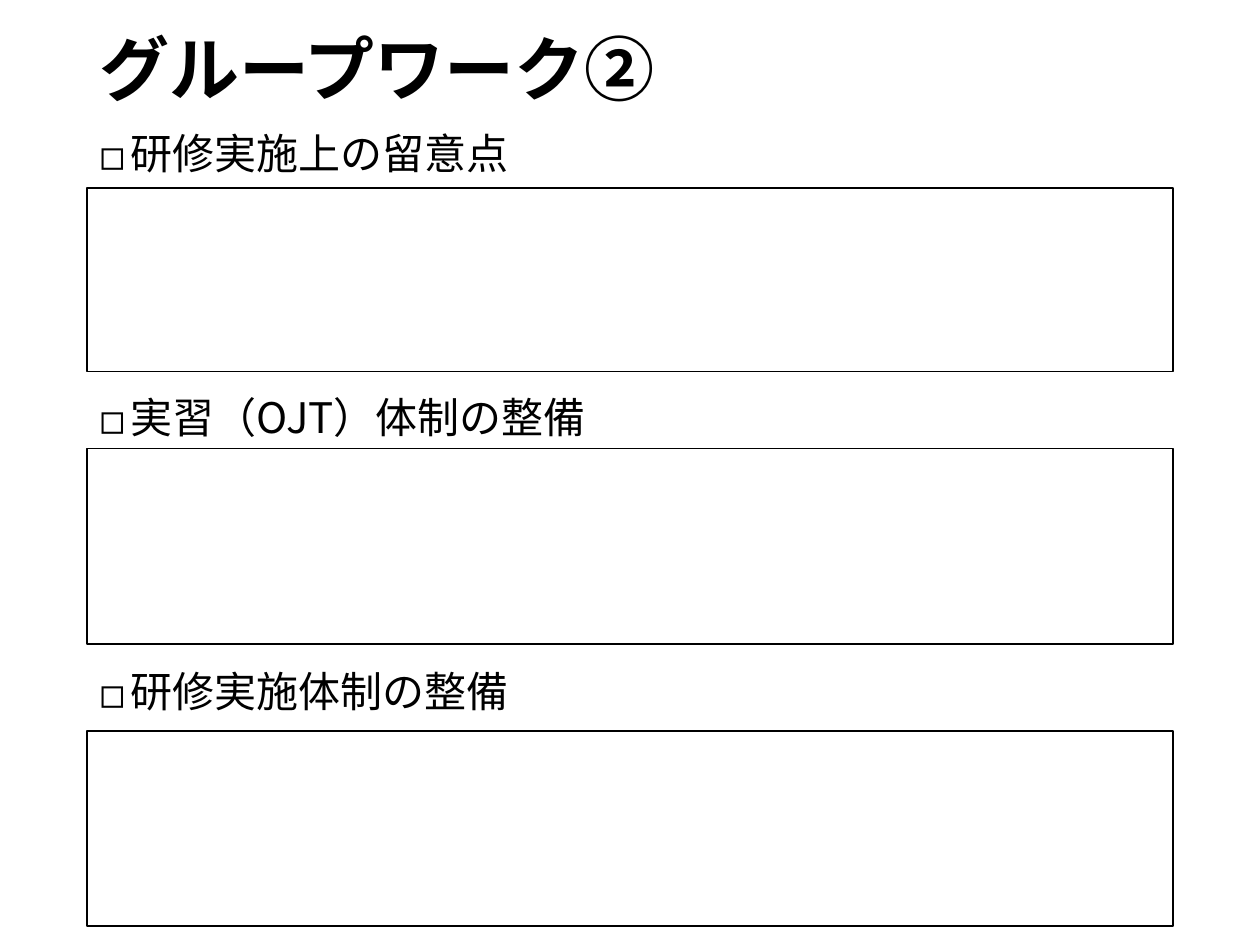
from dataclasses import dataclass

import pptx
import pptx.dml.color
import pptx.enum.shapes
import pptx.enum.text
import pptx.oxml
import pptx.oxml.ns
import pptx.util
from lxml import etree

WIDE, HIGH = 10, 7.5
LEFT, SPAN, REACH = 0.069, 0.862, 0.896  # shares of the slide's width
FONT = "Noto Sans CJK JP"
INK = {"text": "000000", "line": "000000", "fill": "FFFFFF"}
HEAD = {"size": pptx.util.Pt(40), "bold": True}
ITEM = {"size": pptx.util.Pt(24), "bold": False}


@dataclass
class Topic:
    """One heading and its answer box; lengths in inches."""
    text: str
    top: float
    box: float
    tall: float


TOPICS = [
    Topic("研修実施上の留意点", 1.01, 1.49, 1.46),
    Topic("実習（OJT）体制の整備", 3.10, 3.56, 1.55),
    Topic("研修実施体制の整備", 5.28, 5.80, 1.55),
]


def color(name: str) -> pptx.dml.color.RGBColor:
    return pptx.dml.color.RGBColor.from_string(INK[name])


def area(top: float, share: float, tall: float) -> list:
    """Left, top, width and height of a row that starts at the left margin."""
    return [pptx.util.Inches(n) for n in (LEFT * WIDE, top, share * WIDE, tall)]


def write(slide, text: str, place: list, style: dict, anchor):
    """Add a one-line text box and return its paragraph."""
    frame = slide.shapes.add_textbox(*place).text_frame
    frame.word_wrap = True
    frame.vertical_anchor = anchor
    para = frame.paragraphs[0]
    para.line_spacing = 0.9
    run = para.add_run()
    run.text = text
    for key, value in {"name": FONT, **style}.items():
        setattr(run.font, key, value)
    run.font.color.rgb = color("text")
    east = etree.SubElement(run.font._element, pptx.oxml.ns.qn("a:ea"))
    east.set("typeface", FONT)
    return para


def mark(para) -> None:
    """Give the paragraph a square bullet with a hanging indent."""
    para.space_before = pptx.util.Pt(10)
    props = para._p.get_or_add_pPr()
    step = pptx.util.Inches(0.25)
    props.set("marL", str(step))
    props.set("indent", str(-step))
    for tag, key, value in (("a:buFont", "typeface", FONT),
                            ("a:buChar", "char", "◻")):
        etree.SubElement(props, pptx.oxml.ns.qn(tag)).set(key, value)


def frame(slide, place: list) -> None:
    kind = pptx.enum.shapes.MSO_SHAPE.RECTANGLE
    box = slide.shapes.add_shape(kind, *place)
    box.shadow.inherit = False
    box.fill.solid()
    box.fill.fore_color.rgb = color("fill")
    box.line.color.rgb = color("line")
    box.line.width = pptx.util.Pt(1)


def main() -> None:
    deck = pptx.Presentation()
    deck.slide_width = pptx.util.Inches(WIDE)
    deck.slide_height = pptx.util.Inches(HIGH)
    slide = deck.slides.add_slide(deck.slide_layouts[6])
    anchor = pptx.enum.text.MSO_ANCHOR
    write(slide, "グループワーク②", area(0, SPAN, 1.16), HEAD, anchor.MIDDLE)
    for topic in TOPICS:
        place = area(topic.top, REACH, 0.52)
        mark(write(slide, topic.text, place, ITEM, anchor.TOP))
        frame(slide, area(topic.box, SPAN, topic.tall))
    deck.save("out.pptx")


if __name__ == "__main__":
    main()
